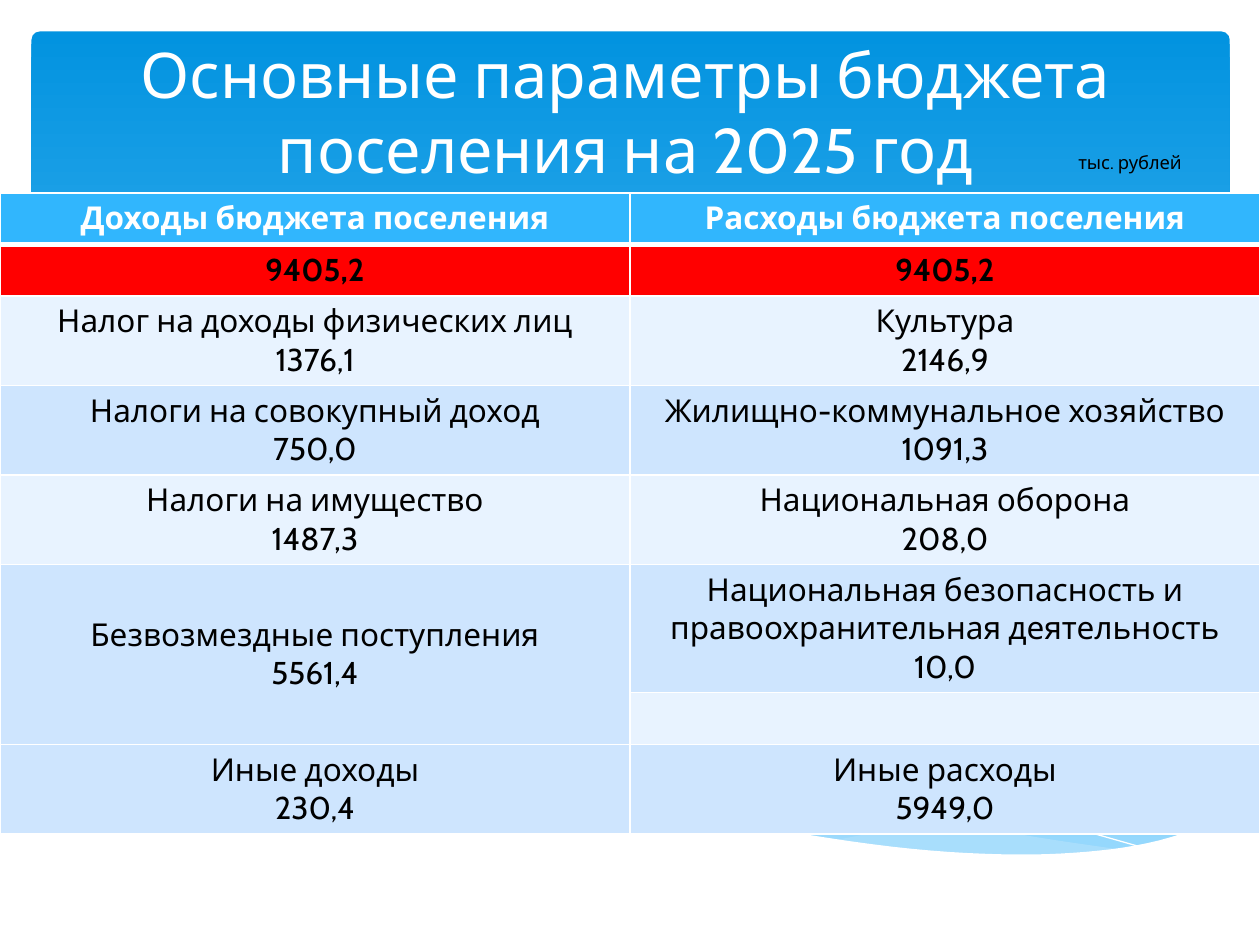
from lxml import etree
from pptx import Presentation
from pptx.dml.color import RGBColor
from pptx.enum.shapes import MSO_SHAPE
from pptx.enum.text import MSO_ANCHOR, MSO_AUTO_SIZE, PP_ALIGN
from pptx.oxml.ns import qn
from pptx.util import Inches, Pt

CENTER, LEFT = PP_ALIGN.CENTER, PP_ALIGN.LEFT
TOP, MIDDLE, BOTTOM = MSO_ANCHOR.TOP, MSO_ANCHOR.MIDDLE, MSO_ANCHOR.BOTTOM
NO_FIT, GROW = MSO_AUTO_SIZE.NONE, MSO_AUTO_SIZE.SHAPE_TO_FIT_TEXT
ROUNDED = MSO_SHAPE.ROUNDED_RECTANGLE
TITLE_ONLY = 5
GRID_COLUMNS, GRID_ROWS = 100, 75

COLORS = {
    "white": "FFFFFF", "black": "000000", "sky_dark": "0293E0",
    "sky_light": "83D3FE", "wave": "C6E7FC", "header": "31B6FD",
    "total": "FF0000", "pale": "E8F3FF", "blue": "CEE5FE",
}

BUDGET = [
    (4.1, "header", ["Доходы бюджета поселения"], ["Расходы бюджета поселения"]),
    (4.1, "total", ["9405,2"], ["9405,2"]),
    (7.1, "pale", ["Налог на доходы физических лиц", "1376,1"], ["Культура", "2146,9"]),
    (7.1, "blue", ["Налоги на совокупный доход", "750,0"],
     ["Жилищно-коммунальное хозяйство", "1091,3"]),
    (7.1, "pale", ["Налоги на имущество", "1487,3"], ["Национальная оборона", "208,0"]),
    (10.1, "blue", ["Безвозмездные поступления", "5561,4"],
     ["Национальная безопасность и правоохранительная деятельность", "10,0"]),
    (4.1, "pale", [], []),
    (7.1, "blue", ["Иные доходы", "230,4"], ["Иные расходы", "5949,0"]),
]
MERGED_ROWS = (5, 6)

RIGHT_WAVE = [
    [(97.6, 60.1), (92.2, 61.1), (86.2, 62.5), (78, 64.4), (66.2, 66.7)],
    [(66.2, 66.7), (73.3, 67.6), (80.4, 68), (86.4, 67.8), (92.2, 66.7), (97.7, 64.9)],
]
LONG_WAVE = [
    [(89.4, 67.5), (80.8, 66.2), (70.7, 64.2), (58.4, 61.3), (48.9, 59.6),
     (38, 58.7), (28.7, 59.3)],
    [(28.7, 59.3), (36.3, 60.4), (45, 62.4), (56.7, 65), (66.6, 66.8),
     (74.9, 67.8), (81.9, 68), (89.4, 67.5)],
]
FALLING_LINE = [[(31, 59.7), (36.3, 59), (43.3, 58.9), (51.1, 59.4), (60.9, 60.6),
                 (72.8, 62.8), (83.2, 65.2), (90.8, 67.3)]]
RISING_LINE = [[(61.4, 65.9), (69.6, 63.7), (80.7, 61.2), (89.7, 59.6), (97.6, 58.7)]]
FRONT_WAVE = [
    [(97.7, 64.8), (92, 66.7), (86.3, 67.6), (79.3, 67.8), (70.8, 67.2),
     (60.3, 65.6), (50.3, 63.5), (39.1, 60.9), (29.2, 59.2), (19.3, 58.6),
     (11.9, 58.9), (6.7, 59.9), (2.3, 61.5)],
    [(2.3, 73.1), (97.7, 73.1)],
]


def smooth_curve(knots, steps=6):
    padded = [knots[0], *knots, knots[-1]]
    points = [knots[0]]
    for a, b, c, d in zip(padded, padded[1:], padded[2:], padded[3:]):
        for step in range(1, steps + 1):
            t = step / steps
            points.append(tuple(
                q + t * (r - p) / 2 + t**2 * (2 * p - 5 * q + 4 * r - s) / 2
                + t**3 * (3 * q - p - 3 * r + s) / 2
                for p, q, r, s in zip(a, b, c, d)))
    return points


class BudgetSlide:
    font = "Cabin"

    def __init__(self, deck):
        self.page = deck.slides.add_slide(deck.slide_layouts[TITLE_ONLY])
        self.column = deck.slide_width / GRID_COLUMNS
        self.row = deck.slide_height / GRID_ROWS

    def color(self, name):
        return RGBColor.from_string(COLORS[name])

    def place(self, left, top, width, height):
        return (round(left * self.column), round(top * self.row),
                round(width * self.column), round(height * self.row))

    def fill_text(self, frame, lines, size, color, bold=False, align=CENTER):
        for index, line in enumerate(lines):
            para = frame.paragraphs[0] if index == 0 else frame.add_paragraph()
            para.alignment = align
            span = para.add_run()
            span.text = line
            span.font.color.rgb = self.color(color)
            values = {"name": self.font, "size": Pt(size), "bold": bold}
            for name, value in values.items():
                setattr(span.font, name, value)

    def backdrop(self, *area):
        panel = self.page.shapes.add_shape(ROUNDED, *self.place(*area))
        panel.shadow.inherit = False
        panel.adjustments[0] = 0.01
        panel.line.fill.background()
        panel.fill.gradient()
        panel.fill.gradient_angle = 270
        for stop, position, name in zip(panel.fill.gradient_stops, (0, 1),
                                        ("sky_dark", "sky_light")):
            stop.position = position
            stop.color.rgb = self.color(name)

    def wave(self, curves, fill=None, opacity=100):
        points = [(round(x * self.column), round(y * self.row))
                  for curve in curves for x, y in smooth_curve(curve)]
        builder = self.page.shapes.build_freeform(*points[0])
        builder.add_line_segments(points[1:], close=fill is not None)
        outline = builder.convert_to_shape()
        outline.shadow.inherit = False
        if fill is None:
            outline.fill.background()
            outline.line.color.rgb = self.color("white")
            outline.line.width = Pt(0)
            return
        outline.line.fill.background()
        outline.fill.solid()
        outline.fill.fore_color.rgb = self.color(fill)
        if opacity < 100:
            paint = outline._element.spPr.find(f".//{qn('a:srgbClr')}")
            etree.SubElement(paint, qn("a:alpha"), val=str(opacity * 1000))

    def title(self, text, *area):
        box = self.page.shapes.title
        box.left, box.top, box.width, box.height = self.place(*area)
        self.page.shapes._spTree.append(box._element)
        values = {"word_wrap": True, "auto_size": NO_FIT, "vertical_anchor": BOTTOM}
        for name, value in values.items():
            setattr(box.text_frame, name, value)
        self.fill_text(box.text_frame, [text], 36, "white")

    def note(self, text, *area):
        box = self.page.shapes.add_textbox(*self.place(*area))
        box.text_frame.word_wrap = True
        box.text_frame.auto_size = GROW
        self.fill_text(box.text_frame, [text], 10.5, "black", align=LEFT)

    def border(self, cell, bottom):
        properties = cell._tc.get_or_add_tcPr()
        for side, width in (("L", 1), ("R", 1), ("T", 1), ("B", bottom)):
            edge = etree.SubElement(properties, qn(f"a:ln{side}"), w=str(Pt(width)))
            paint = etree.SubElement(edge, qn("a:solidFill"))
            etree.SubElement(paint, qn("a:srgbClr"), val=COLORS["white"])

    def table(self, records, merged, left, top, width):
        area = self.place(left, top, width, sum(record[0] for record in records))
        table = self.page.shapes.add_table(len(records), 2, *area).table
        table.first_row = table.horz_banding = False
        for index, (height, fill, *sides) in enumerate(records):
            table.rows[index].height = round(height * self.row)
            heading = fill == "header"
            for cell, lines in zip(table.rows[index].cells, sides):
                self.border(cell, 3 if heading else 1)
                cell.fill.solid()
                cell.fill.fore_color.rgb = self.color(fill)
                cell.vertical_anchor = TOP
                self.fill_text(cell.text_frame, lines, 18, "white" if heading else "black",
                               bold=fill in ("header", "total"))
        first, last = merged
        table.cell(first, 0).merge(table.cell(last, 0))
        table.cell(first, 0).vertical_anchor = MIDDLE


def main():
    deck = Presentation()
    deck.slide_width, deck.slide_height = Inches(10), Inches(7.5)
    slide = BudgetSlide(deck)
    slide.backdrop(2.5, 2.5, 95.1, 66)
    slide.wave(RIGHT_WAVE, "wave", 29)
    slide.wave(LONG_WAVE, "wave", 40)
    slide.wave(FALLING_LINE)
    slide.wave(RISING_LINE)
    slide.wave(FRONT_WAVE, "white")
    slide.title("Основные параметры бюджета поселения на 2025 год", 6.7, 1.3, 85.9, 14)
    slide.table(BUDGET, MERGED_ROWS, 0, 15.3, 100)
    slide.note("тыс. рублей", 84.6, 11.5, 14.2, 2.8)
    deck.save("out.pptx")


if __name__ == "__main__":
    main()
